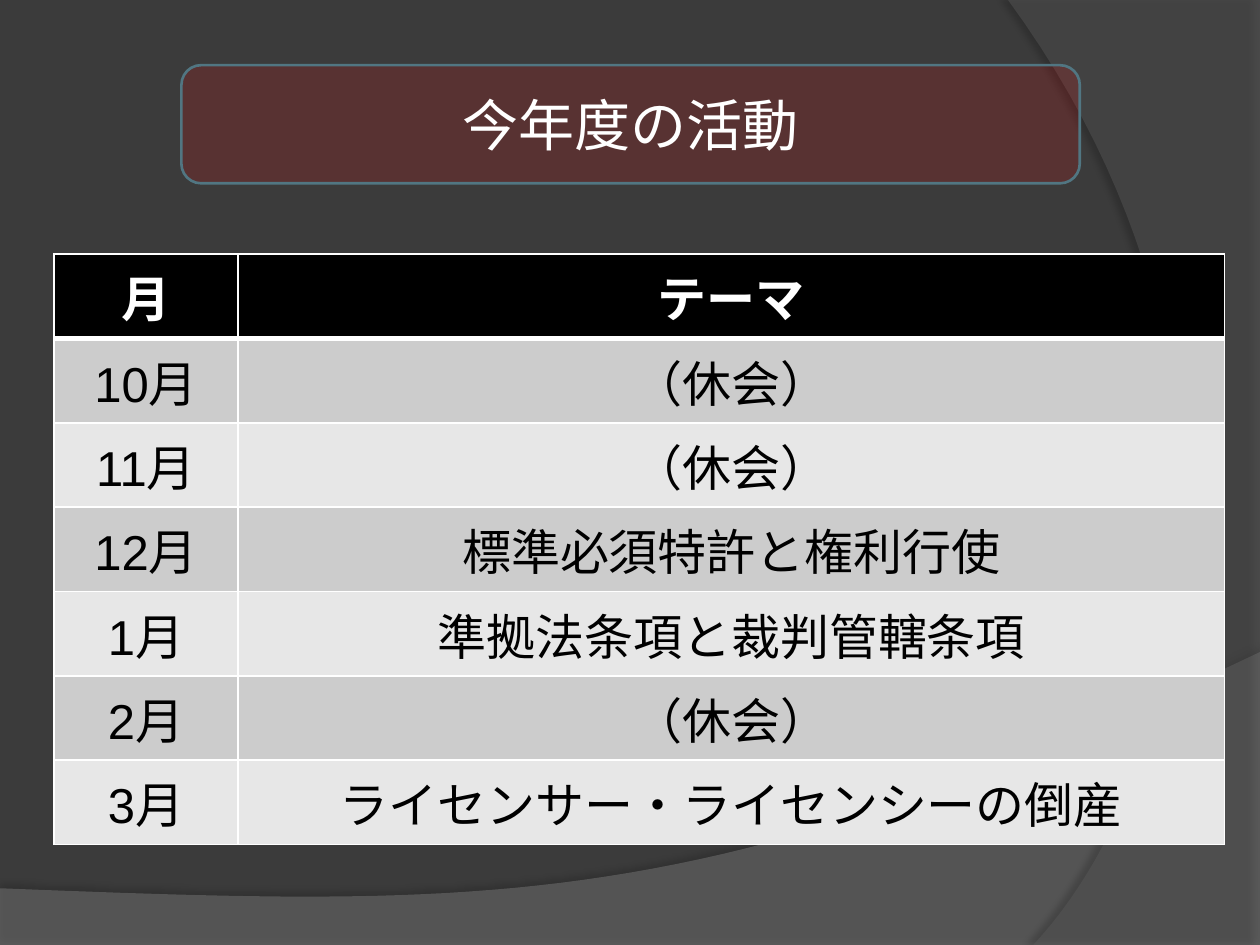
import pptx
import pptx.util
import pptx.dml.color
import pptx.enum.shapes
import pptx.enum.text
import pptx.oxml
import pptx.oxml.ns

COLORS = {
    "background": "3B3B3B", "lower_wave": "7F7F7F", "side_wave": "5E5E5E",
    "shadow": "000000", "title_fill": "FF0000", "title_line": "517682",
    "header": "000000", "odd_row": "CCCCCC", "even_row": "E7E7E7",
    "light": "FFFFFF", "dark": "000000",
}
FONT = "Arial"
ROWS = [
    ("月", "テーマ"),
    ("10月", "（休会）"),
    ("11月", "（休会）"),
    ("12月", "標準必須特許と権利行使"),
    ("1月", "準拠法条項と裁判管轄条項"),
    ("2月", "（休会）"),
    ("3月", "ライセンサー・ライセンシーの倒産"),
]
MONTH_SHARE = 0.157


def rgb(name):
    return pptx.dml.color.RGBColor.from_string(COLORS[name])


def xml(text):
    return pptx.oxml.parse_xml(text.replace(">", f" {pptx.oxml.ns.nsdecls('a')}>", 1))


def fill_shape(sp, color, opacity):
    sp.shadow.inherit = False
    sp.fill.solid()
    sp.fill.fore_color.rgb = rgb(color)
    clr = sp._element.spPr.find(".//" + pptx.oxml.ns.qn("a:srgbClr"))
    clr.append(xml(f'<a:alpha val="{opacity * 1000}"></a:alpha>'))


def add_shadow(sp, opacity, blur, distance, angle):
    effects = sp._element.spPr.find(pptx.oxml.ns.qn("a:effectLst"))
    effects.append(xml(
        f'<a:outerShdw blurRad="{pptx.util.Pt(blur)}" dist="{pptx.util.Pt(distance)}"'
        f' dir="{angle * 60000}" algn="ctr" rotWithShape="0">'
        f'<a:srgbClr val="{COLORS["shadow"]}"><a:alpha val="{opacity * 1000}"/>'
        '</a:srgbClr></a:outerShdw>'))


def curve(p0, p1, p2, p3, steps=48):
    points = []
    for i in range(steps + 1):
        t = i / steps
        u = 1 - t
        points.append(tuple(
            u ** 3 * a + 3 * u * u * t * b + 3 * u * t * t * c + t ** 3 * d
            for a, b, c, d in zip(p0, p1, p2, p3)))
    return points


def add_wave(slide, box, points, color, opacity, shadow):
    left, top, width, height = box
    spots = [(round(left + x * width), round(top + y * height)) for x, y in points]
    builder = slide.shapes.build_freeform(*spots[0])
    builder.add_line_segments(spots[1:], close=True)
    sp = builder.convert_to_shape()
    fill_shape(sp, color, opacity)
    sp.line.fill.background()
    add_shadow(sp, *shadow)


def add_background(slide, box):
    slide.background.fill.solid()
    slide.background.fill.fore_color.rgb = rgb("background")
    lower = curve((1, 0.69), (0.56, 0.97), (0.39, 0.96), (0, 0.94)) + [(0, 1), (1, 1)]
    side = curve((0.82, 1), (0.94, 0.83), (1.02, 0.4), (0.8, 0)) + [(1, 0), (1, 1)]
    add_wave(slide, box, lower, "lower_wave", 45, (35, 4, 3.5, 270))
    add_wave(slide, box, side, "side_wave", 40, (45, 4, 4, 180))


def style_text(tf, text, size, color, bold=False):
    tf.text = text
    p = tf.paragraphs[0]
    p.alignment = pptx.enum.text.PP_ALIGN.CENTER
    p.font.name = FONT
    p.font.size = pptx.util.Pt(size)
    p.font.bold = bold
    p.font.color.rgb = rgb(color)


def add_title(slide, box):
    sp = slide.shapes.add_shape(pptx.enum.shapes.MSO_SHAPE.ROUNDED_RECTANGLE, *box)
    fill_shape(sp, "title_fill", 15)
    sp.line.color.rgb = rgb("title_line")
    sp.line.width = pptx.util.Pt(1.5)
    sp.text_frame.vertical_anchor = pptx.enum.text.MSO_ANCHOR.MIDDLE
    style_text(sp.text_frame, "今年度の活動", 32, "light")


def add_borders(cell, top, bottom):
    tc_pr = cell._tc.get_or_add_tcPr()
    for side, width in (("L", 1), ("R", 1), ("T", top), ("B", bottom)):
        tc_pr.append(xml(
            f'<a:ln{side} w="{pptx.util.Pt(width)}"><a:solidFill>'
            f'<a:srgbClr val="{COLORS["light"]}"/></a:solidFill></a:ln{side}>'))


def add_schedule(slide, box):
    width, height = box[2:]
    table = slide.shapes.add_table(len(ROWS), 2, *box).table
    table.columns[0].width = round(width * MONTH_SHARE)
    table.columns[1].width = width - table.columns[0].width
    for i, texts in enumerate(ROWS):
        table.rows[i].height = height // len(ROWS)
        is_header = i == 0
        fill = "header" if is_header else "odd_row" if i % 2 else "even_row"
        for j, text in enumerate(texts):
            cell = table.cell(i, j)
            add_borders(cell, 3 if i == 1 else 1, 3 if is_header else 1)
            cell.fill.solid()
            cell.fill.fore_color.rgb = rgb(fill)
            cell.vertical_anchor = pptx.enum.text.MSO_ANCHOR.MIDDLE
            style_text(cell.text_frame, text, 28, "light" if is_header else "dark", is_header)


def main():
    prs = pptx.Presentation()
    prs.slide_width = pptx.util.Inches(10)
    prs.slide_height = pptx.util.Inches(7.5)
    slide = prs.slides.add_slide(prs.slide_layouts[6])

    def share(x, y, w, h):
        return (round(x * prs.slide_width / 1000), round(y * prs.slide_height / 1000),
                round(w * prs.slide_width / 1000), round(h * prs.slide_height / 1000))

    add_background(slide, share(0, 0, 1000, 1000))
    add_schedule(slide, share(43, 269, 929, 625))
    add_title(slide, share(144, 69, 713, 125))
    prs.save("out.pptx")


if __name__ == "__main__":
    main()
